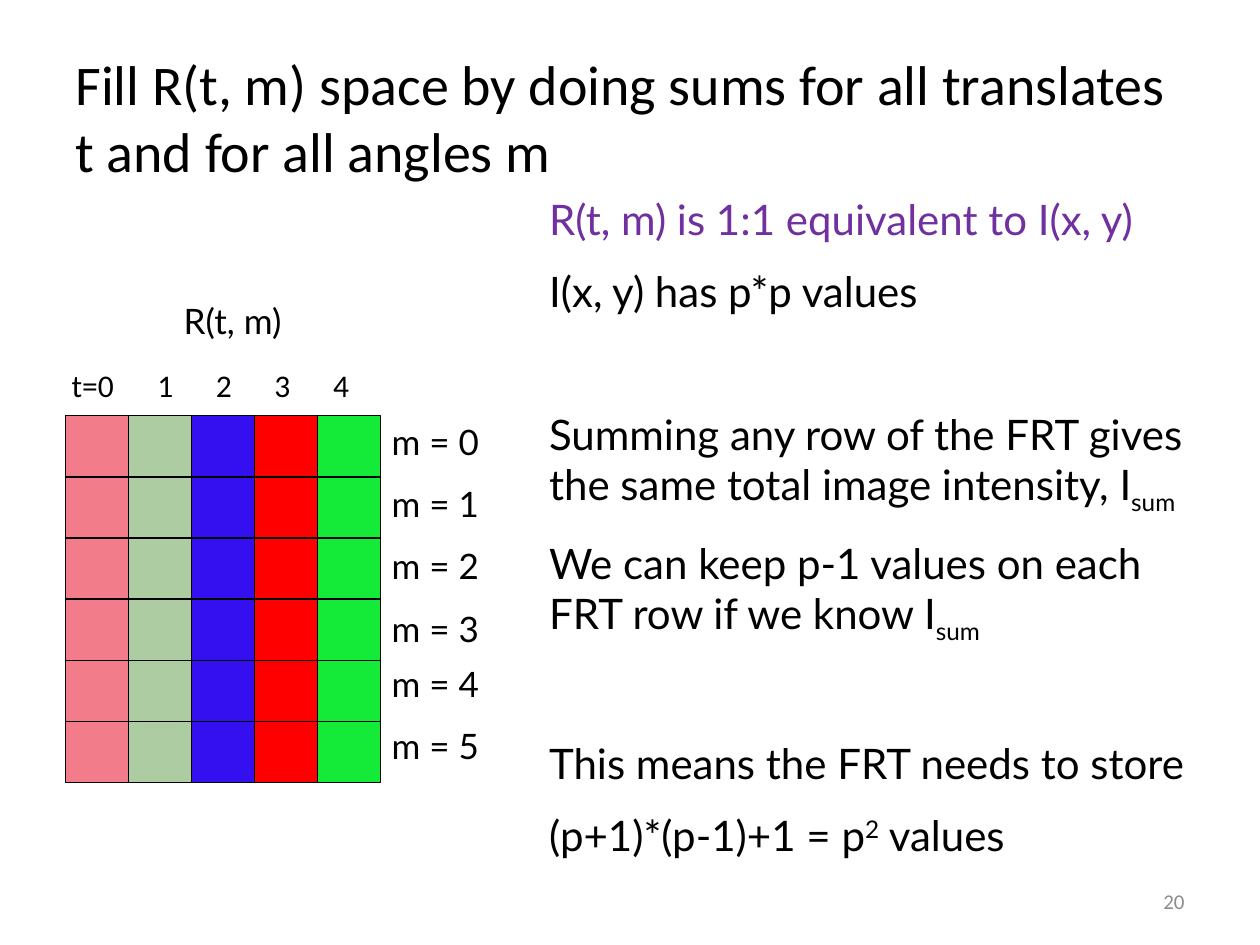
import pptx
import pptx.dml.color
import pptx.enum.shapes
import pptx.enum.text
import pptx.oxml
import pptx.oxml.ns
import pptx.util

Inches = pptx.util.Inches
Pt = pptx.util.Pt
ALIGN = pptx.enum.text.PP_ALIGN
ANCHOR = pptx.enum.text.MSO_ANCHOR

BLACK = "000000"
PURPLE = "7030A0"
GREY = "8C8C8C"
COLUMN_COLORS = ["F27C8A", "ADCCA2", "340FEF", "FF0000", "14EA38"]
ROW_LABEL_TOPS = [3.29, 3.78, 4.27, 4.77, 5.21, 5.7]
GRID_LEFT, GRID_TOP = 0.52, 3.3
CELL_WIDTH, CELL_HEIGHT = 0.5, 0.485
SUBSCRIPT, SUPERSCRIPT = -25, 30
SMALL_GAP, LARGE_GAP = 12, 53

# Each statement: space before, colour, runs of (text, baseline shift)
STATEMENTS = [
    (0, PURPLE, [("R(t, m) is 1:1 equivalent to I(x, y)", 0)]),
    (SMALL_GAP, BLACK, [("I(x, y) has p*p values", 0)]),
    (LARGE_GAP, BLACK, [
        ("Summing any row of the FRT gives the same total image intensity, I", 0),
        ("sum", SUBSCRIPT)]),
    (SMALL_GAP, BLACK, [
        ("We can keep p-1 values on each FRT row if we know I", 0),
        ("sum", SUBSCRIPT)]),
    (LARGE_GAP, BLACK, [("This means the FRT needs to store", 0)]),
    (SMALL_GAP, BLACK, [
        ("(p+1)*(p-1)+1 = p", 0), ("2", SUPERSCRIPT), (" values", 0)]),
]


def rgb(color):
    return pptx.dml.color.RGBColor.from_string(color)


def set_attributes(target, values):
    for name, value in values.items():
        setattr(target, name, value)


def add_frame(slide, left, top, width, height, anchor=ANCHOR.TOP):
    box = slide.shapes.add_textbox(
        Inches(left), Inches(top), Inches(width), Inches(height))
    set_attributes(box.text_frame, {"word_wrap": True, "vertical_anchor": anchor})
    return box.text_frame


def add_run(paragraph, text, size, font="Lato", color=BLACK, baseline=0):
    run = paragraph.add_run()
    run.text = text
    set_attributes(run.font, {"name": font, "size": Pt(size)})
    run.font.color.rgb = rgb(color)
    if baseline:
        run._r.get_or_add_rPr().set("baseline", str(baseline * 1000))


def add_label(slide, bounds, text, size, font="Lato", color=BLACK,
              anchor=ANCHOR.TOP, align=ALIGN.LEFT):
    paragraph = add_frame(slide, *bounds, anchor=anchor).paragraphs[0]
    paragraph.alignment = align
    add_run(paragraph, text, size, font, color)
    return paragraph


def add_tab_stops(paragraph, positions):
    tab_list = pptx.oxml.parse_xml(
        f'<a:tabLst {pptx.oxml.ns.nsdecls("a")}>'
        + "".join(f'<a:tab pos="{Inches(position)}" algn="l"/>'
                  for position in positions)
        + "</a:tabLst>")
    paragraph._p.get_or_add_pPr().append(tab_list)


def add_cell(slide, row, column):
    cell = slide.shapes.add_shape(
        pptx.enum.shapes.MSO_SHAPE.RECTANGLE,
        Inches(GRID_LEFT + column * CELL_WIDTH),
        Inches(GRID_TOP + row * CELL_HEIGHT),
        Inches(CELL_WIDTH), Inches(CELL_HEIGHT))
    cell.shadow.inherit = False
    cell.fill.solid()
    cell.fill.fore_color.rgb = rgb(COLUMN_COLORS[column])
    cell.line.color.rgb = rgb(BLACK)
    cell.line.width = Pt(0.75)


def add_transform_grid(slide):
    add_label(slide, (1.36, 2.33, 1.39, 0.53), "R(t, m)", 20)
    header = add_label(slide, (0.47, 2.86, 3.18, 0.4),
                       "t=0\t1\t2\t3\t4", 18, "Calibri")
    add_tab_stops(header, [0.68 + 0.465 * index for index in range(4)])
    for row, label_top in enumerate(ROW_LABEL_TOPS):
        for column in range(len(COLUMN_COLORS)):
            add_cell(slide, row, column)
        add_label(slide, (3.01, label_top, 1.1, 0.44), f"m = {row}", 20)


def add_statements(slide):
    frame = add_frame(slide, 4.26, 1.49, 5.41, 5.55)
    for index, (gap, color, runs) in enumerate(STATEMENTS):
        paragraph = frame.add_paragraph() if index else frame.paragraphs[0]
        paragraph.space_before = Pt(gap)
        for text, baseline in runs:
            add_run(paragraph, text, 24, color=color, baseline=baseline)


def main():
    presentation = pptx.Presentation()
    set_attributes(presentation,
                   {"slide_width": Inches(10), "slide_height": Inches(7.5)})
    slide = presentation.slides.add_slide(presentation.slide_layouts[6])
    add_label(slide, (0.5, 0.3, 9, 1.25),
              "Fill R(t, m) space by doing sums for all translates t "
              "and for all angles m", 32, "Calibri", anchor=ANCHOR.MIDDLE)
    add_statements(slide)
    add_transform_grid(slide)
    add_label(slide, (7.17, 6.95, 2.33, 0.4), "20", 12, "Calibri", GREY,
              ANCHOR.MIDDLE, ALIGN.RIGHT)
    presentation.save("out.pptx")


if __name__ == "__main__":
    main()
